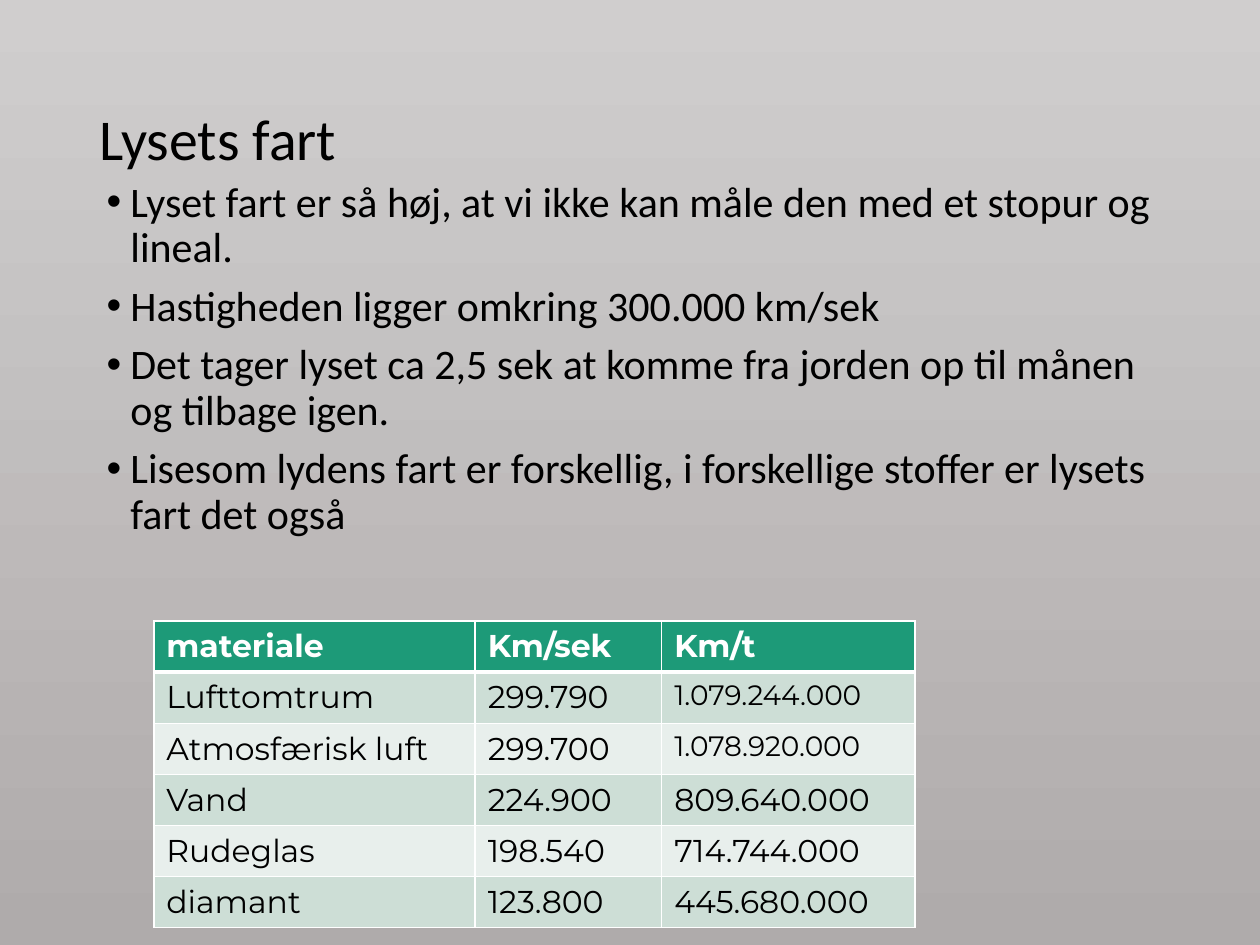
from lxml.etree import SubElement
from pptx import Presentation
from pptx.dml.color import RGBColor
from pptx.enum.text import MSO_ANCHOR
from pptx.oxml.ns import qn
from pptx.util import Cm, Pt

BLACK = RGBColor(0x00, 0x00, 0x00)
WHITE = RGBColor(0xFF, 0xFF, 0xFF)
GREEN = RGBColor(0x1D, 0x9A, 0x78)
BAND_DARK = RGBColor(0xCD, 0xDE, 0xD6)
BAND_LIGHT = RGBColor(0xE8, 0xEF, 0xEC)
GREY_TOP = RGBColor(0xD0, 0xCE, 0xCE)
GREY_BOTTOM = RGBColor(0xAF, 0xAB, 0xAB)

FACTS = [
    "Lyset fart er så høj, at vi ikke kan måle den med et stopur og lineal.",
    "Hastigheden ligger omkring 300.000 km/sek",
    "Det tager lyset ca 2,5 sek at komme fra jorden op til månen og tilbage igen.",
    "Lisesom lydens fart er forskellig, i forskellige stoffer er lysets fart det også",
]
SPEEDS = [
    ("materiale", "Km/sek", "Km/t"),
    ("Lufttomtrum", "299.790", "1.079.244.000"),
    ("Atmosfærisk luft", "299.700", "1.078.920.000"),
    ("Vand", "224.900", "809.640.000"),
    ("Rudeglas", "198.540", "714.744.000"),
    ("diamant", "123.800", "445.680.000"),
]
COLUMN_WIDTHS = [Cm(6.48), Cm(3.76), Cm(5.11)]
ROW_HEIGHT = Cm(1.03)


def paint_background(slide):
    fill = slide.background.fill
    fill.gradient()
    fill.gradient_angle = 270
    for stop, color, position in zip(fill.gradient_stops, (GREY_TOP, GREY_BOTTOM), (0, 1)):
        stop.color.rgb = color
        stop.position = position


def style_runs(paragraph, font_name, size, color, bold=False):
    for run in paragraph.runs:
        run.font.name = font_name
        run.font.size = Pt(size)
        run.font.color.rgb = color
        run.font.bold = bold


def add_text(slide, left, top, width, height, lines, size, anchor):
    frame = slide.shapes.add_textbox(left, top, width, height).text_frame
    frame.word_wrap = True
    frame.vertical_anchor = anchor
    frame.text = "\n".join(lines)
    for paragraph in frame.paragraphs:
        paragraph.line_spacing = 0.9
        style_runs(paragraph, "Calibri", size, BLACK)
    return frame


def add_bullets(frame):
    for index, paragraph in enumerate(frame.paragraphs):
        paragraph.space_before = Pt(7.5 if index else 0)
        properties = paragraph._p.get_or_add_pPr()
        properties.set("marL", str(Cm(0.48)))
        properties.set("indent", str(-Cm(0.48)))
        SubElement(properties, qn("a:buFont"), typeface="Arial")
        SubElement(properties, qn("a:buChar"), char="•")


def add_border(cell, side, width):
    line = SubElement(cell._tc.get_or_add_tcPr(), qn(f"a:ln{side}"), w=str(Pt(width)))
    fill = SubElement(line, qn("a:solidFill"))
    SubElement(fill, qn("a:srgbClr"), val=str(WHITE))


def style_cell(cell, row):
    header = row == 0
    widths = {"L": 1, "R": 1, "T": 3 if row == 1 else 1, "B": 3 if header else 1}
    for side, width in widths.items():
        add_border(cell, side, width)
    cell.fill.solid()
    cell.fill.fore_color.rgb = GREEN if header else BAND_DARK if row % 2 else BAND_LIGHT
    size = 16 if len(cell.text) == len("1.079.244.000") else 18
    style_runs(cell.text_frame.paragraphs[0], "Montserrat", size,
               WHITE if header else BLACK, header)


def add_speed_table(slide, left, top):
    table = slide.shapes.add_table(len(SPEEDS), len(COLUMN_WIDTHS), left, top,
                                   sum(COLUMN_WIDTHS), ROW_HEIGHT * len(SPEEDS)).table
    for column, width in zip(table.columns, COLUMN_WIDTHS):
        column.width = width
    for row, values in enumerate(SPEEDS):
        table.rows[row].height = ROW_HEIGHT
        for column, value in enumerate(values):
            cell = table.cell(row, column)
            cell.text = value
            style_cell(cell, row)


def main():
    deck = Presentation()
    deck.slide_width, deck.slide_height = Cm(25.4), Cm(19.05)
    slide = deck.slides.add_slide(deck.slide_layouts[6])
    paint_background(slide)
    add_text(slide, Cm(1.75), Cm(1.02), Cm(21.89), Cm(3.68),
             ["Lysets fart"], 33, MSO_ANCHOR.MIDDLE)
    facts = add_text(slide, Cm(1.9), Cm(3.53), Cm(21.59), Cm(11.43),
                     FACTS, 24, MSO_ANCHOR.TOP)
    add_bullets(facts)
    add_speed_table(slide, Cm(3.1), Cm(12.52))
    deck.save("out.pptx")


if __name__ == "__main__":
    main()
